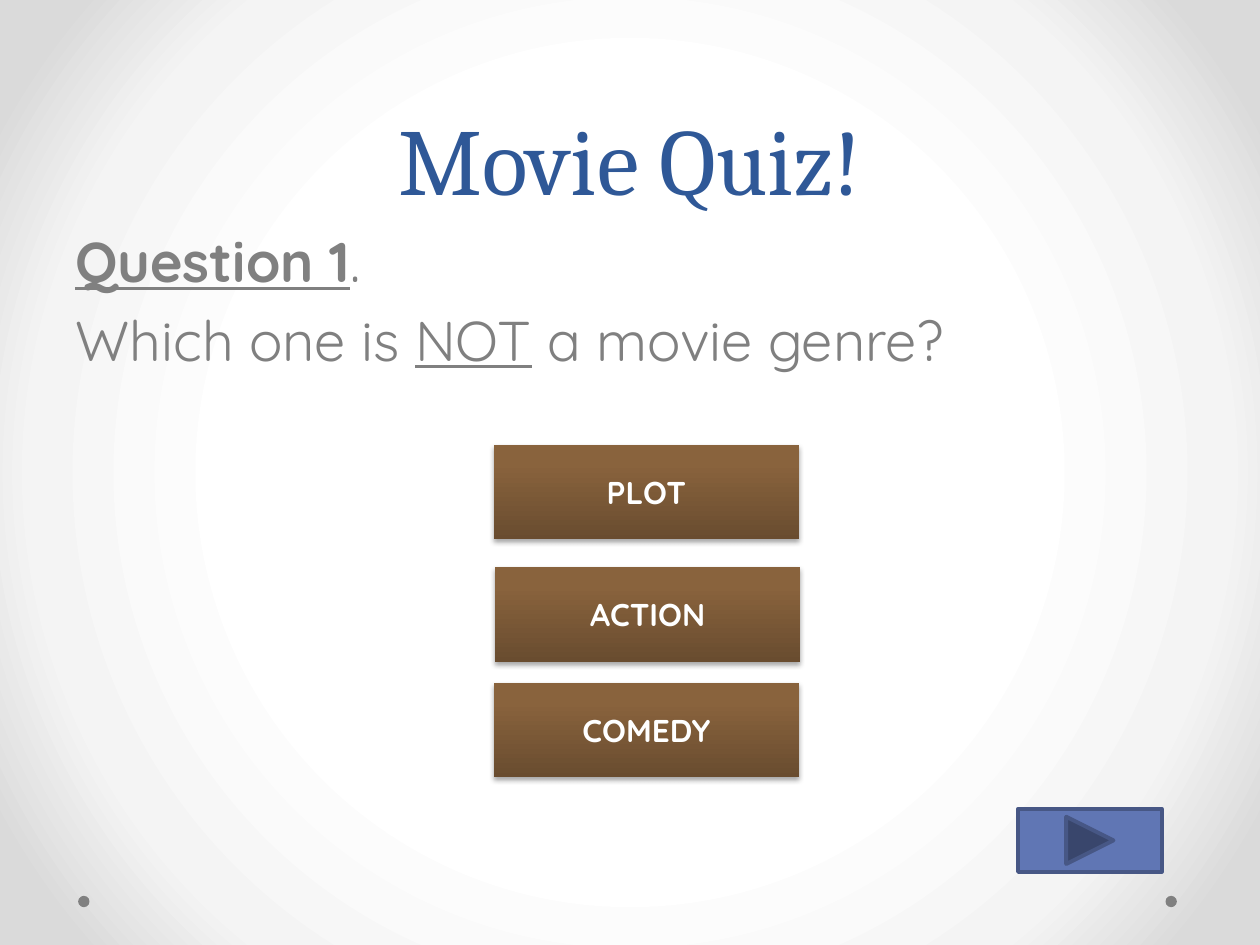
from pptx import Presentation
from pptx.dml.color import RGBColor
from pptx.enum.shapes import MSO_SHAPE as SHAPE
from pptx.enum.text import MSO_ANCHOR as ANCHOR, PP_ALIGN as ALIGN
from pptx.oxml import parse_xml
from pptx.oxml.ns import nsdecls, qn
from pptx.util import Inches, Pt

TITLE = [[("Movie Quiz!", "")]]
QUESTION = [
    [("Question 1", "bu"), (".", "")],
    [("Which one is ", ""), ("NOT", "u"), (" a movie genre?", "")],
]
ANSWERS = [("PLOT", 3.92, 3.53), ("ACTION", 3.93, 4.5), ("COMEDY", 3.92, 5.42)]
ANSWER_SIZE = (2.42, 0.75)
DOT_LEFTS = (0.62, 9.25)

THEME = {
    "heading": "Cambria", "body": "Quicksand",
    "title": "2F5897", "text": "808080", "label": "FFFFFF",
    "next": "6076B4", "next_line": "475785",
    "title_size": 54, "text_size": 32, "label_size": 18,
    "backdrop": [(50, "FFFFFF"), (76, "F4F4F4"), (92, "DADADA")],
    "wood": [(0, "694C2F"), (80, "89633D"), (100, "8B633C")],
}
RADIAL = ('<a:path path="circle"><a:fillToRect l="50000" t="50000" '
          'r="50000" b="50000"/></a:path>')
UPWARD = '<a:lin ang="16200000" scaled="0"/>'


def write(s, paragraphs, font, size, color, align=ALIGN.LEFT,
          anchor=ANCHOR.TOP, before=0, spacing=None):
    tf = s.text_frame
    tf.word_wrap = True
    tf.vertical_anchor = anchor
    for i, runs in enumerate(paragraphs):
        p = tf.add_paragraph() if i else tf.paragraphs[0]
        p.alignment = align
        p.space_before = Pt(before)
        if spacing:
            p.line_spacing = Pt(spacing)
        for text, style in runs:
            r = p.add_run()
            r.text = text
            r.font.name = font
            r.font.size = Pt(size)
            r.font.color.rgb = RGBColor.from_string(color)
            r.font.bold = "b" in style
            r.font.underline = "u" in style


def set_gradient(fill, element, stops, direction):
    fill.gradient()
    old = element.find(".//" + qn("a:gradFill"))
    marks = "".join(f'<a:gs pos="{pos * 1000}"><a:srgbClr val="{color}"/></a:gs>'
                    for pos, color in stops)
    new = parse_xml(f'<a:gradFill {nsdecls("a")} rotWithShape="1">'
                    f'<a:gsLst>{marks}</a:gsLst>{direction}</a:gradFill>')
    old.getparent().replace(old, new)


def add_shadow(s):
    s._element.spPr.append(parse_xml(
        f'<a:effectLst {nsdecls("a")}><a:outerShdw blurRad="{Pt(3.1)}" '
        f'dist="{Pt(1.8)}" dir="5400000" rotWithShape="0">'
        '<a:srgbClr val="000000"><a:alpha val="35000"/></a:srgbClr>'
        '</a:outerShdw></a:effectLst>'))


def add_box(slide, *box):
    return slide.shapes.add_textbox(*map(Inches, box))


def add_shape(slide, kind, *box, fill=None, line=None):
    s = slide.shapes.add_shape(kind, *map(Inches, box))
    if fill:
        s.shadow.inherit = False
        s.fill.solid()
        s.fill.fore_color.rgb = RGBColor.from_string(fill)
    if line:
        s.line.color.rgb = RGBColor.from_string(line)
        s.line.width = Pt(2.25)
    else:
        s.line.fill.background()
    return s


def main():
    prs = Presentation()
    prs.slide_width, prs.slide_height = Inches(10), Inches(7.5)
    slide = prs.slides.add_slide(prs.slide_layouts[6])
    set_gradient(slide.background.fill, slide._element, THEME["backdrop"], RADIAL)

    for left in DOT_LEFTS:
        add_shape(slide, SHAPE.OVAL, left, 7.11, 0.09, 0.09, fill=THEME["text"])

    write(add_box(slide, 0.5, 0, 9, 1.75), TITLE, THEME["heading"],
          THEME["title_size"], THEME["title"], align=ALIGN.CENTER,
          anchor=ANCHOR.BOTTOM, spacing=58)
    write(add_box(slide, 0.5, 1.75, 9, 4.95), QUESTION, THEME["body"],
          THEME["text_size"], THEME["text"], before=6.4)

    for label, left, top in ANSWERS:
        s = add_shape(slide, SHAPE.ACTION_BUTTON_CUSTOM, left, top, *ANSWER_SIZE)
        set_gradient(s.fill, s._element, THEME["wood"], UPWARD)
        add_shadow(s)
        write(s, [[(label, "b")]], THEME["body"], THEME["label_size"],
              THEME["label"], align=ALIGN.CENTER, anchor=ANCHOR.MIDDLE)

    add_shape(slide, SHAPE.ACTION_BUTTON_FORWARD_OR_NEXT, 8.08, 6.42, 1.14, 0.5,
              fill=THEME["next"], line=THEME["next_line"])
    prs.save("out.pptx")


if __name__ == "__main__":
    main()
